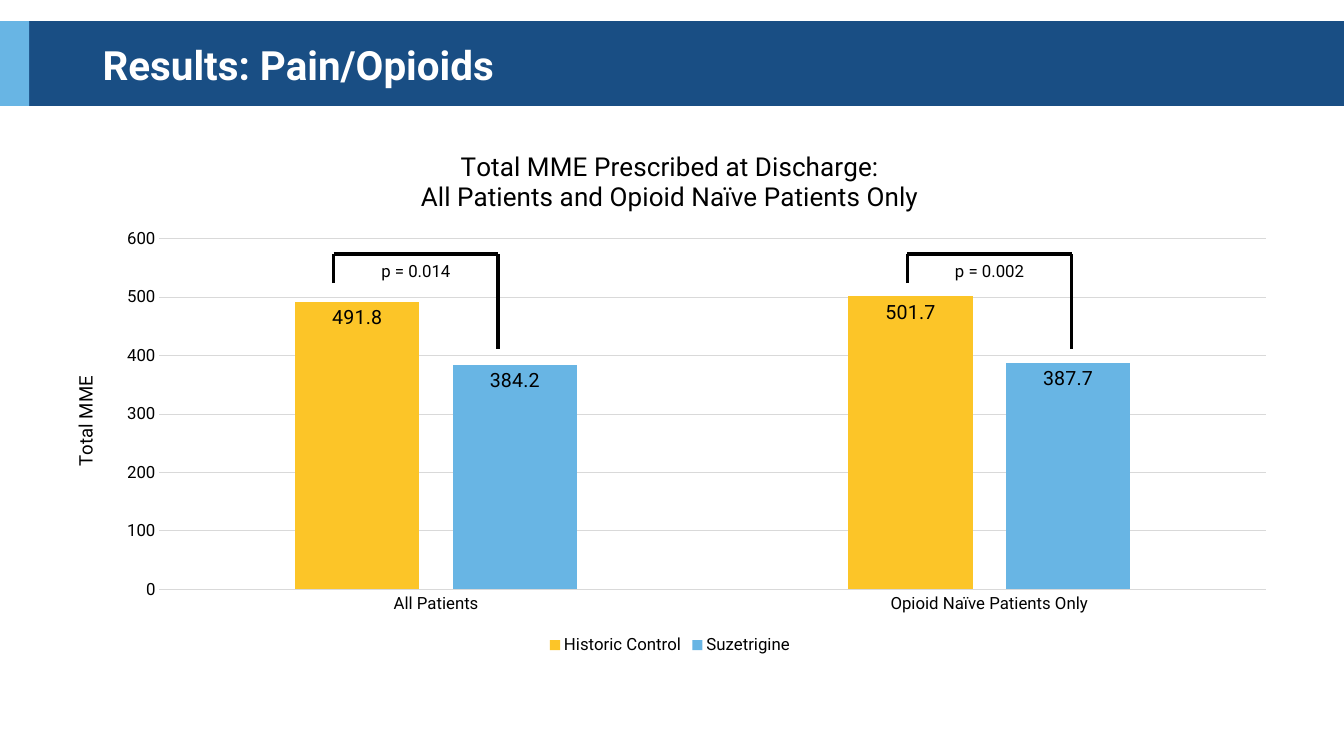
import pptx
import pptx.util
import pptx.dml.color
import pptx.chart.data
import pptx.enum.chart
import pptx.enum.shapes
import pptx.enum.text
import pptx.oxml
import pptx.oxml.ns
from dataclasses import dataclass

# Content
HEAD = "Results: Pain/Opioids"
TITLE = ["Total MME Prescribed at Discharge:", "All Patients and Opioid Naïve Patients Only"]
AXIS = "Total MME"
CATS = ["All Patients", "Opioid Naïve Patients Only"]
SERIES = [("Historic Control", [491.8, 501.7], "FCC528"),
          ("Suzetrigine", [384.2, 387.7], "68B5E4")]
TESTS = ["p = 0.014", "p = 0.002"]


@dataclass
class Theme:
    face: str = "Roboto"
    navy: str = "194E84"
    sky: str = "68B5E4"
    ink: str = "000000"
    paper: str = "FFFFFF"
    grid: str = "D9D9D9"
    head: float = 28.8
    title: float = 18.6
    axis: float = 13.3
    label: float = 14
    small: float = 12


T = Theme()

# Layout
W, H = 13.33, 7.5
BAND = (0.21, 0.84)                     # top, height
CHART = (0.5, 1.3, 12.29, 5.24)
PLOT = dict(x=0.088, y=0.204, w=0.893, h=0.664)   # shares of the chart
BRACE = dict(left=3.31, top=2.52, span=1.63, short=0.29, long=0.94, step=5.69)

Inch = pptx.util.Inches
Pt = pptx.util.Pt
Pos = pptx.enum.chart.XL_LEGEND_POSITION


def rgb(code):
    return pptx.dml.color.RGBColor.from_string(code)


def style(font, size, color=T.ink, bold=False):
    font.name, font.size, font.bold = T.face, Pt(size), bold
    font.color.rgb = rgb(color)


def block(shapes, box, color):
    rect = shapes.add_shape(pptx.enum.shapes.MSO_SHAPE.RECTANGLE, *map(Inch, box))
    rect.shadow.inherit = False
    rect.fill.solid()
    rect.fill.fore_color.rgb = rgb(color)
    rect.line.fill.background()


def text(shapes, box, words, size, color=T.ink, bold=False, align="LEFT"):
    frame = shapes.add_textbox(*map(Inch, box)).text_frame
    frame.word_wrap = True
    frame.vertical_anchor = pptx.enum.text.MSO_ANCHOR.MIDDLE
    para = frame.paragraphs[0]
    para.text = words
    para.alignment = pptx.enum.text.PP_ALIGN[align]
    style(para.font, size, color, bold)


def line(shapes, start, end):
    rule = shapes.add_connector(pptx.enum.shapes.MSO_CONNECTOR.STRAIGHT,
                                *map(Inch, (*start, *end)))
    rule.line.color.rgb = rgb(T.ink)
    rule.line.width = Pt(2.25)
    props = rule._element.spPr
    props.append(props.makeelement(pptx.oxml.ns.qn("a:effectLst"), {}))


def caption(frame, lines, size):
    frame.text = "\n".join(lines)
    for para in frame.paragraphs:
        style(para.font, size)


def place(chart):
    area = chart._chartSpace.chart.plotArea
    for old in area.findall(pptx.oxml.ns.qn("c:layout")):
        area.remove(old)
    marks = '<c:layoutTarget val="inner"/><c:xMode val="edge"/><c:yMode val="edge"/>'
    marks += "".join(f'<c:{key} val="{val}"/>' for key, val in PLOT.items())
    area.insert(0, pptx.oxml.parse_xml(
        f'<c:layout {pptx.oxml.ns.nsdecls("c")}><c:manualLayout>{marks}'
        '</c:manualLayout></c:layout>'))


def graph(shapes):
    data = pptx.chart.data.CategoryChartData()
    data.categories = CATS
    for name, vals, _ in SERIES:
        data.add_series(name, vals)
    kind = pptx.enum.chart.XL_CHART_TYPE.COLUMN_CLUSTERED
    chart = shapes.add_chart(kind, *map(Inch, CHART), data).chart
    style(chart.font, T.small)
    caption(chart.chart_title.text_frame, TITLE, T.title)
    chart.chart_title.include_in_layout = False
    chart.has_legend = True
    chart.legend.position = Pos.BOTTOM
    chart.legend.include_in_layout = False
    style(chart.legend.font, T.small)

    # Axes
    cat, val = chart.category_axis, chart.value_axis
    for axis in (cat, val):
        axis.major_tick_mark = pptx.enum.chart.XL_TICK_MARK.NONE
        axis.minor_tick_mark = pptx.enum.chart.XL_TICK_MARK.NONE
        style(axis.tick_labels.font, T.small)
    val.minimum_scale, val.maximum_scale, val.major_unit = 0, 600, 100
    val.format.line.fill.background()
    val.has_major_gridlines = True
    for rule in (cat.format.line, val.major_gridlines.format.line):
        rule.color.rgb = rgb(T.grid)
        rule.width = Pt(0.75)
    caption(val.axis_title.text_frame, [AXIS], T.axis)

    # Columns
    plot = chart.plots[0]
    plot.gap_width, plot.overlap, plot.vary_by_categories = 219, -27, False
    for item, (_, _, color) in zip(plot.series, SERIES):
        item.format.fill.solid()
        item.format.fill.fore_color.rgb = rgb(color)
        labels = item.data_labels
        labels.show_value = True
        labels.position = pptx.enum.chart.XL_LABEL_POSITION.INSIDE_END
        style(labels.font, T.label)
    place(chart)


def brace(shapes, index, words):
    group = shapes.add_group_shape().shapes
    left = BRACE["left"] + index * BRACE["step"]
    right, top = left + BRACE["span"], BRACE["top"]
    text(group, (left + 0.21, top + 0.02, 1.21, 0.3), words, T.small, align="CENTER")
    line(group, (left, top + BRACE["short"]), (left, top))
    line(group, (right, top + BRACE["long"]), (right, top))
    line(group, (left, top), (right, top))


def main():
    deck = pptx.Presentation()
    deck.slide_width, deck.slide_height = Inch(W), Inch(H)
    shapes = deck.slides.add_slide(deck.slide_layouts[6]).shapes
    # Heading band
    top, tall = BAND
    block(shapes, (0, top, W, tall), T.navy)
    block(shapes, (0, top, 0.29, tall), T.sky)
    # Chart, heading and test results
    graph(shapes)
    text(shapes, (0.92, 0.4, 11.19, 0.48), HEAD, T.head, T.paper, bold=True)
    for index, words in enumerate(TESTS):
        brace(shapes, index, words)
    deck.save("out.pptx")


if __name__ == "__main__":
    main()
